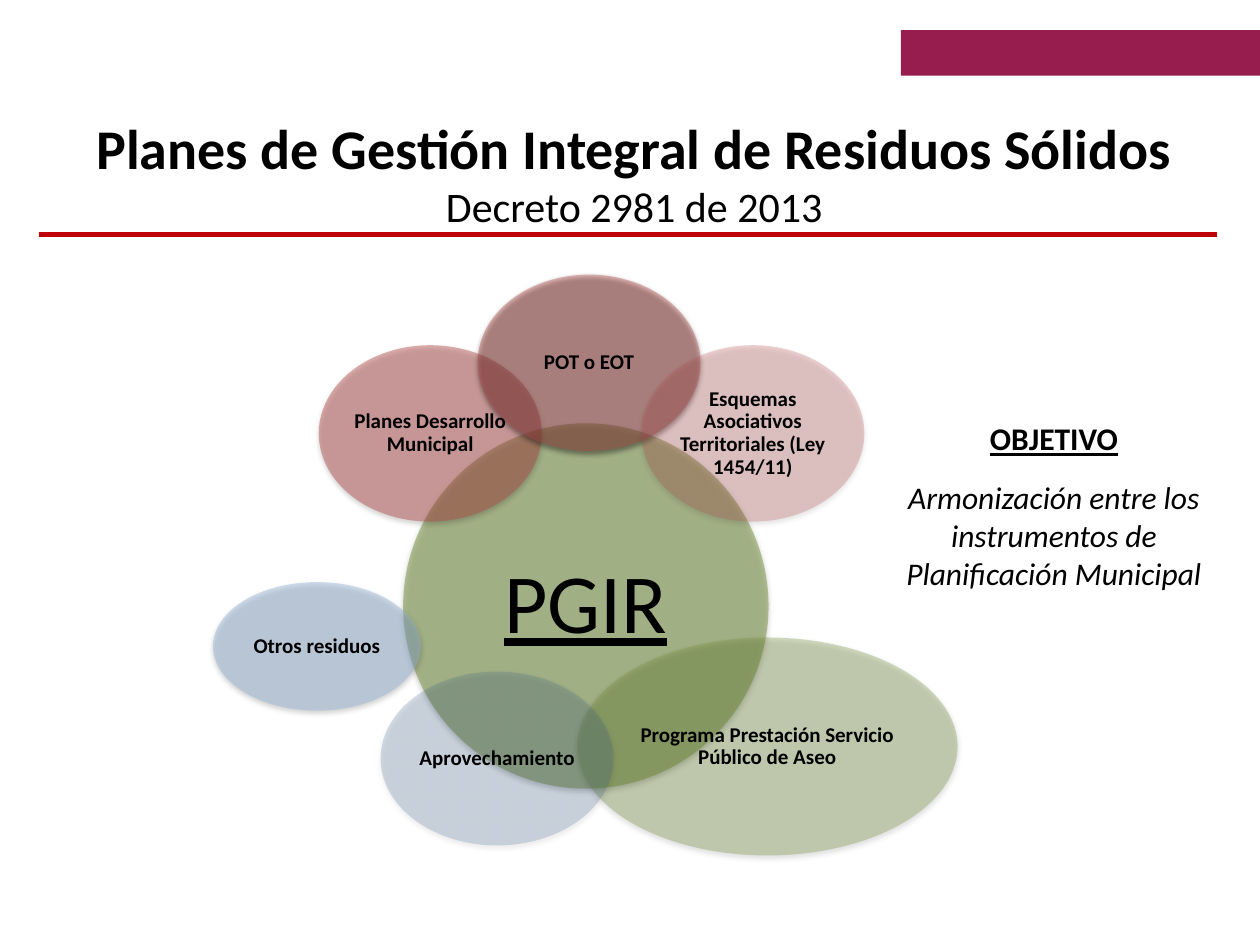
from lxml.etree import SubElement
from pptx import Presentation
from pptx.dml.color import RGBColor
from pptx.enum.shapes import MSO_CONNECTOR, MSO_SHAPE
from pptx.enum.text import MSO_ANCHOR, PP_ALIGN
from pptx.oxml.ns import qn
from pptx.util import Inches, Pt


def paint(color, hue):
    color.rgb = RGBColor.from_string(hue)


def shade(shape, blur, dist, angle, alpha):
    """Give the shape a soft black shadow; lengths in points."""
    shape.shadow.inherit = False
    effects = shape._element.spPr.find(qn("a:effectLst"))
    outer = SubElement(effects, qn("a:outerShdw"), blurRad=str(Pt(blur)),
                       dist=str(Pt(dist)), dir=str(angle * 60000),
                       rotWithShape="0")
    black = SubElement(outer, qn("a:srgbClr"), val="000000")
    SubElement(black, qn("a:alpha"), val=str(alpha * 1000))


deck = Presentation()
deck.slide_width, deck.slide_height = Inches(10), Inches(7.5)
slide = deck.slides.add_slide(deck.slide_layouts[5])
shapes = slide.shapes

# Plain block, top right
block = shapes.add_shape(MSO_SHAPE.RECTANGLE, Inches(7.15), Inches(0.24),
                         Inches(2.85), Inches(0.36))
block.fill.solid()
paint(block.fill.fore_color, "961D4E")
block.line.fill.background()
block.shadow.inherit = False

# Title and its red rule
title = shapes.title
title.left, title.top = Inches(0.28), Inches(0.85)
title.width, title.height = Inches(9.51), Inches(1.25)
frame = title.text_frame
frame.vertical_anchor = MSO_ANCHOR.TOP
frame.margin_top = Inches(0.05)
para = frame.paragraphs[0]
para.alignment = PP_ALIGN.CENTER
para.font.name = "Calibri"
paint(para.font.color, "000000")
for words, size, bold in [("Planes de Gestión Integral de Residuos Sólidos", 32, True),
                          ("Decreto 2981 de 2013", 24, False)]:
    if para.runs:
        para.add_line_break()
    run = para.add_run()
    run.text = words
    run.font.size, run.font.bold = Pt(size), bold

rule = shapes.add_connector(MSO_CONNECTOR.STRAIGHT, Inches(0.31), Inches(1.86),
                            Inches(9.66), Inches(1.86))
paint(rule.line.color, "C00000")
rule.line.width = Pt(3)
SubElement(rule._element.spPr, qn("a:effectLst"))

# Overlapping circles: text, left, top, width, height, fill, opacity
circles = [
    ("PGIR", 3.2, 3.36, 2.9, 2.9, "77933C", 50),
    ("Planes Desarrollo Municipal", 2.53, 2.74, 1.77, 1.4, "B34946", 44),
    ("POT o EOT", 3.79, 2.18, 1.77, 1.4, "B84A47", 38),
    ("Programa Prestación Servicio Público de Aseo",
     4.58, 5.06, 3.02, 1.73, "77933C", 32),
    ("Esquemas Asociativos Territoriales (Ley 1454/11)",
     5.09, 2.74, 1.77, 1.4, "BD4F4C", 26),
    ("Aprovechamiento", 3.02, 5.33, 1.85, 1.38, "376092", 20),
    ("Otros residuos", 1.69, 4.62, 1.65, 1.02, "95B3D7", 44),
]
share = 0.71  # side of the label box as a share of its circle
for words, left, top, width, height, hue, alpha in circles:
    oval = shapes.add_shape(MSO_SHAPE.OVAL, Inches(left), Inches(top),
                            Inches(width), Inches(height))
    oval.fill.solid()
    paint(oval.fill.fore_color, hue)
    tint = oval._element.spPr.find(".//" + qn("a:srgbClr"))
    SubElement(tint, qn("a:alpha"), val=str(alpha * 1000))
    oval.line.fill.background()
    shade(oval, 3.1, 1.6, 90, 38)

    # The label is its own box, so that the shadow leaves the text alone
    main = words == "PGIR"
    label = shapes.add_textbox(Inches(left + width * (1 - share) / 2),
                               Inches(top + height * (1 - share) / 2),
                               Inches(width * share), Inches(height * share))
    frame = label.text_frame
    frame.word_wrap = True
    frame.vertical_anchor = MSO_ANCHOR.MIDDLE
    frame.margin_left = frame.margin_right = Inches(0.07 if main else 0.02)
    frame.margin_top = frame.margin_bottom = Inches(0.07 if main else 0.02)
    para = frame.paragraphs[0]
    para.text = words
    para.alignment = PP_ALIGN.CENTER
    para.line_spacing = 0.9
    font = para.font
    font.name, font.size = "Calibri", Pt(48 if main else 12)
    font.bold, font.underline = not main, main
    paint(font.color, "000000")

# Objective
box = shapes.add_textbox(Inches(6.85), Inches(3.28), Inches(3.03), Inches(1.48))
frame = box.text_frame
frame.word_wrap = True
head, body = frame.paragraphs[0], frame.add_paragraph()
head.text = "OBJETIVO"
body.text = "Armonización entre los instrumentos de Planificación Municipal"
body.space_before = Pt(12)
for para in (head, body):
    para.alignment = PP_ALIGN.CENTER
    para.font.name, para.font.size = "Calibri", Pt(18)
    paint(para.font.color, "000000")
head.font.bold = head.font.underline = True
body.font.italic = True

deck.save("out.pptx")
